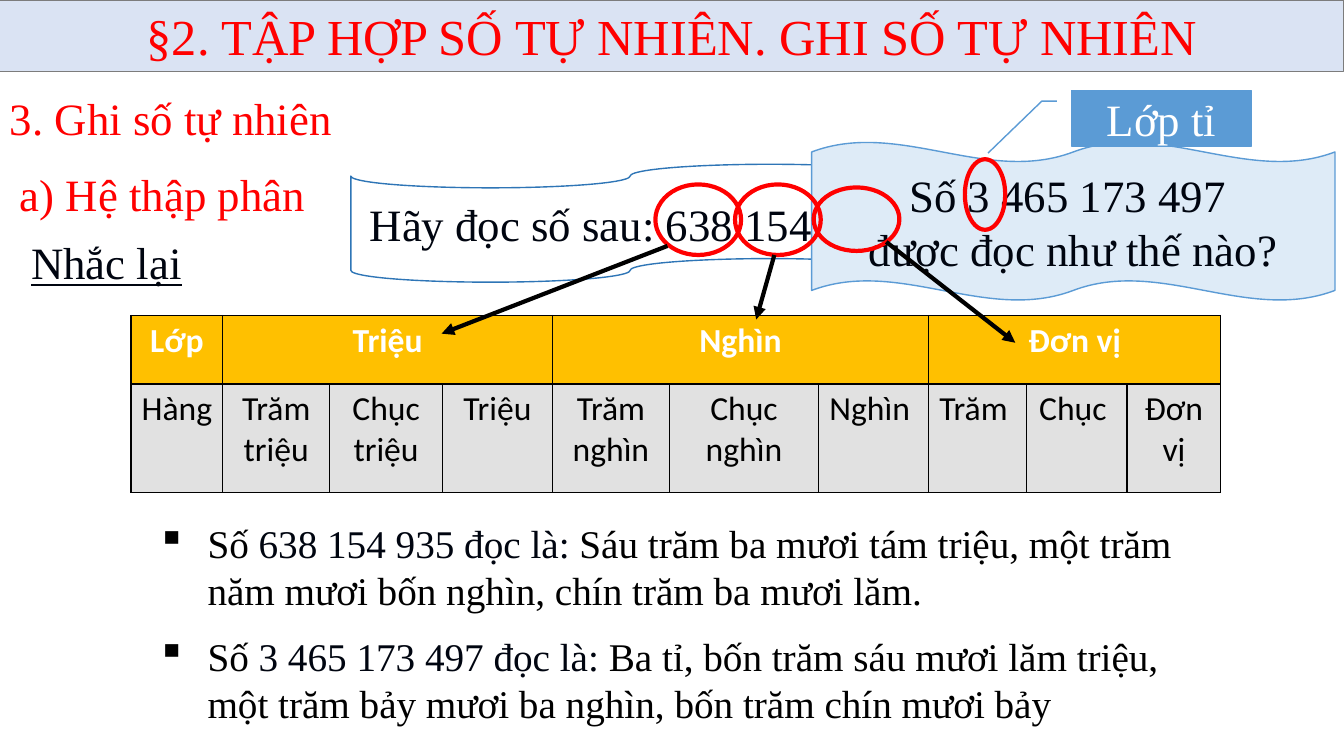
from dataclasses import dataclass

from lxml.etree import SubElement
from pptx import Presentation
from pptx.dml.color import RGBColor
from pptx.enum.shapes import MSO_CONNECTOR, MSO_SHAPE
from pptx.enum.text import MSO_ANCHOR, PP_ALIGN
from pptx.oxml.ns import qn
from pptx.util import Pt


@dataclass(frozen=True)
class Theme:
    """Colours, fonts and type sizes of the lesson."""
    red: str = "FF0000"
    ink: str = "000510"
    black: str = "000000"
    white: str = "FFFFFF"
    banner: str = "DAE3F3"
    banner_edge: str = "7C7C7C"
    tape_edge: str = "2E75B6"
    blue: str = "5B9BD5"
    pale_blue: str = "DEEBF7"
    gold: str = "FFC000"
    grey: str = "E1E1E1"
    serif: str = "Times New Roman"
    sans: str = "Calibri"
    title: int = 36
    heading: int = 32
    reading: int = 28
    cell: int = 24


class Lesson:
    """Draws lesson elements on the current slide."""

    PX = 9144

    def __init__(self, deck, theme):
        """Open a blank slide."""
        self.theme = theme
        self.slide = deck.slides.add_slide(deck.slide_layouts[6])
        self.shapes = self.slide.shapes

    def px(self, *lengths):
        """Turn px into EMU."""
        return [length * self.PX for length in lengths]

    def apply(self, target, values):
        """Set each named value on the target."""
        for name, value in values.items():
            setattr(target, name, value)

    def add_words(self, paragraph, text, color, size, align=PP_ALIGN.LEFT, **font):
        """Add one formatted run to a paragraph."""
        paragraph.alignment = align
        run = paragraph.add_run()
        run.text = text
        self.apply(run.font, {"name": self.theme.serif, "size": Pt(size), **font})
        run.font.color.rgb = RGBColor.from_string(color)

    def outline(self, line, color, width):
        """Give a line its colour and width."""
        line.color.rgb = RGBColor.from_string(color)
        line.width = Pt(width)

    def heading(self, area, text, color, anchor=MSO_ANCHOR.TOP, **font):
        """Add a heading in a text box."""
        frame = self.shapes.add_textbox(*self.px(*area)).text_frame
        self.apply(frame, {"word_wrap": True, "vertical_anchor": anchor})
        self.add_words(frame.paragraphs[0], text, color, self.theme.heading, **font)

    def bullet(self, area, parts):
        """Add a bulleted reading made of coloured parts."""
        frame = self.shapes.add_textbox(*self.px(*area)).text_frame
        frame.word_wrap = True
        paragraph = frame.paragraphs[0]
        properties = paragraph._p.get_or_add_pPr()
        indent, = self.px(50)
        properties.set("marL", str(indent))
        properties.set("indent", str(-indent))
        SubElement(properties, qn("a:buChar"), char="▪")
        for text, color in parts:
            self.add_words(paragraph, text, color, self.theme.reading)

    def shape(self, kind, area, edge, width, fill=None, lines=(), color=None,
              size=None, anchor=MSO_ANCHOR.MIDDLE):
        """Add a preset shape with centred lines of text."""
        shape = self.shapes.add_shape(kind, *self.px(*area))
        shape.shadow.inherit = False
        self.outline(shape.line, edge, width)
        if fill:
            shape.fill.solid()
            shape.fill.fore_color.rgb = RGBColor.from_string(fill)
        else:
            shape.fill.background()
        frame = shape.text_frame
        self.apply(frame, {"word_wrap": True, "vertical_anchor": anchor})
        for index, line in enumerate(lines):
            paragraph = frame.add_paragraph() if index else frame.paragraphs[0]
            self.add_words(paragraph, line, color, size or self.theme.heading, PP_ALIGN.CENTER)

    def arrow(self, start, end):
        """Add a black arrow."""
        arrow = self.shapes.add_connector(MSO_CONNECTOR.STRAIGHT, *self.px(*start, *end))
        self.outline(arrow.line, self.theme.black, 3)
        SubElement(arrow.line._get_or_add_ln(), qn("a:tailEnd"), type="triangle")
        SubElement(arrow._element.spPr, qn("a:effectLst"))

    def cell(self, cell, text, fill, color, bold):
        """Border, fill and label one table cell."""
        properties = cell._tc.get_or_add_tcPr()
        for side in ("lnL", "lnR", "lnT", "lnB"):
            border = SubElement(properties, qn(f"a:{side}"), w=str(Pt(1)))
            paint = SubElement(border, qn("a:solidFill"))
            SubElement(paint, qn("a:srgbClr"), val=self.theme.black)
        cell.fill.solid()
        cell.fill.fore_color.rgb = RGBColor.from_string(fill)
        if text:
            self.add_words(cell.text_frame.paragraphs[0], text, color, self.theme.cell,
                           PP_ALIGN.CENTER, name=self.theme.sans, bold=bold)

    def place_table(self, area, widths, heights, classes, places):
        """Add the table of classes, each spanning its places."""
        theme = self.theme
        table = self.shapes.add_table(len(heights), len(widths), *self.px(*area)).table
        self.apply(table, {"first_row": False, "horz_banding": False})
        for column, width in zip(table.columns, self.px(*widths)):
            column.width = width
        for row, height in zip(table.rows, self.px(*heights)):
            row.height = height
        for index, place in enumerate(places):
            self.cell(table.cell(0, index), classes.get(index), theme.gold, theme.white, True)
            self.cell(table.cell(1, index), place, theme.grey, theme.black, False)
        for first in list(classes)[1:]:
            table.cell(0, first).merge(table.cell(0, first + 2))


def main():
    """Build the lesson slide."""
    theme = Theme()
    deck = Presentation()
    deck.slide_width, deck.slide_height = 1333 * Lesson.PX, 750 * Lesson.PX
    lesson = Lesson(deck, theme)

    lesson.shape(MSO_SHAPE.RECTANGLE, (0, 0, 1333, 71), theme.banner_edge, 0.75, theme.banner,
                 ["§2. TẬP HỢP SỐ TỰ NHIÊN. GHI SỐ TỰ NHIÊN"], theme.red, theme.title,
                 MSO_ANCHOR.TOP)
    lesson.heading((0, 85, 700, 63), "3. Ghi số tự nhiên", theme.red)
    lesson.heading((21, 228, 1189, 64), "Nhắc lại", theme.ink, MSO_ANCHOR.MIDDLE, underline=True)
    lesson.heading((10, 160, 700, 63), "a) Hệ thập phân", theme.red)
    lesson.shape(MSO_SHAPE.FLOWCHART_PUNCHED_TAPE, (348, 163, 554, 117), theme.tape_edge, 1,
                 lines=["Hãy đọc số sau: 638 154 935"], color=theme.ink)

    lesson.place_table(
        (130, 313, 1081, 176),
        (91, 106, 112, 109, 116, 148, 109, 97, 100, 93), (68, 108),
        {0: "Lớp", 1: "Triệu", 4: "Nghìn", 7: "Đơn vị"},
        ("Hàng", "Trăm triệu", "Chục triệu", "Triệu", "Trăm nghìn", "Chục nghìn",
         "Nghìn ", "Trăm ", "Chục ", "Đơn vị"))

    lesson.shape(MSO_SHAPE.DOUBLE_WAVE, (805, 141, 519, 157), theme.blue, 1, theme.pale_blue,
                 ["Số 3 465 173 497 ", "được đọc như thế nào?"], theme.ink)
    lesson.shape(MSO_SHAPE.OVAL, (957, 158, 40, 70), theme.red, 3)
    lesson.shape(MSO_SHAPE.LINE_CALLOUT_2, (1063, 90, 178, 55), theme.blue, 1, theme.blue,
                 ["Lớp tỉ"], theme.white)
    for ring in ((650, 183, 85, 70), (729, 183, 85, 70), (807, 186, 85, 63)):
        lesson.shape(MSO_SHAPE.OVAL, ring, theme.red, 3)
    for start, end in (((879, 240), (1007, 340)), ((662, 244), (438, 331)),
                       ((768, 253), (750, 317))):
        lesson.arrow(start, end)

    readings = (
        (510, "638 154 935 đọc là: ", "Sáu trăm ba mươi tám triệu, một trăm năm mươi bốn "
         "nghìn, chín trăm ba mươi lăm."),
        (622, "3 465 173 497 đọc là: ", "Ba tỉ, bốn trăm sáu mươi lăm triệu, một trăm bảy "
         "mươi ba nghìn, bốn trăm chín mươi bảy"))
    for top, number, words in readings:
        lesson.bullet((146, top, 1042, 104), (
            ("Số ", theme.black), (number, theme.ink), (words, theme.black)))

    deck.save("out.pptx")


if __name__ == "__main__":
    main()
